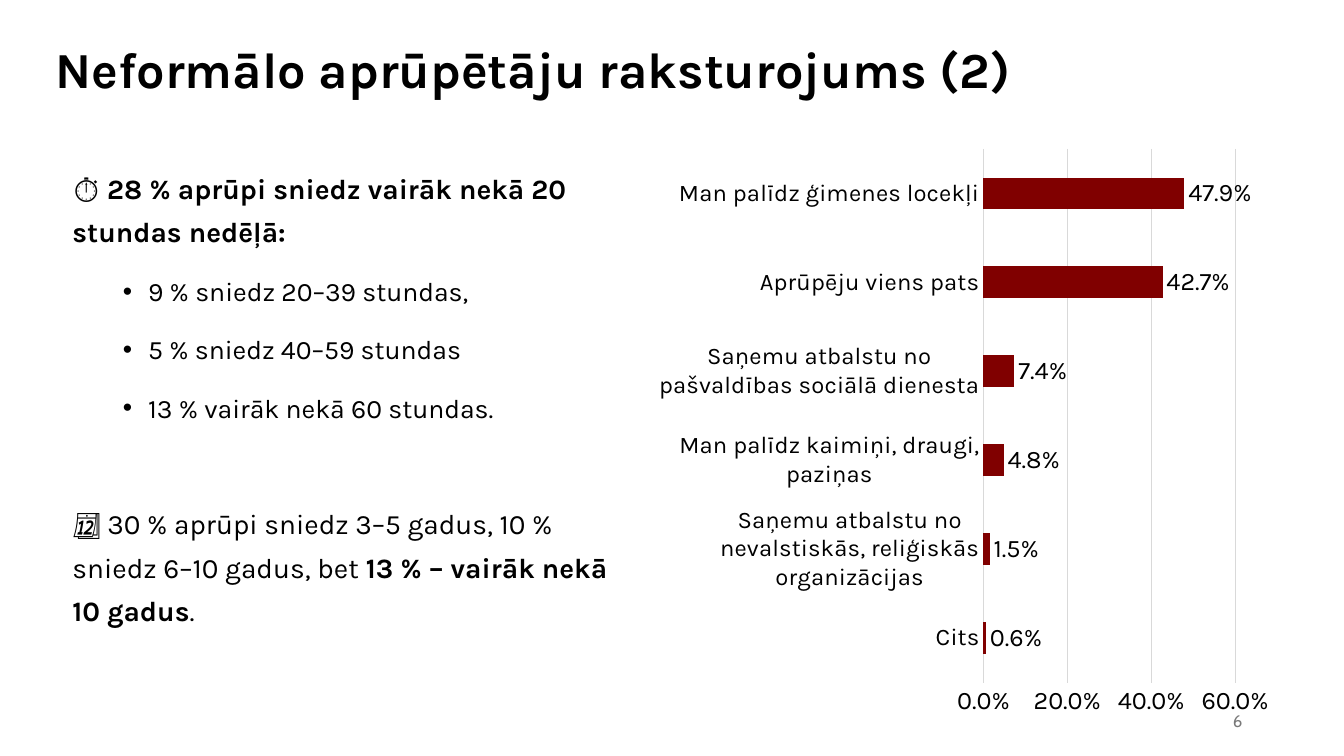
import dataclasses

import pptx
import pptx.chart.data
import pptx.dml.color
import pptx.enum.chart
import pptx.enum.text
import pptx.oxml
import pptx.oxml.ns
import pptx.util

Inches = pptx.util.Inches
Pt = pptx.util.Pt

COLORS = {"text": "000000", "bar": "800000", "grid": "D9D9D9", "number": "797979"}
FONT = "Karla"
PERCENT = "###0.0%"


@dataclasses.dataclass(frozen=True)
class Span:
    text: str
    size: float = 20
    bold: bool = False
    color: str = "text"
    font: str = FONT


@dataclasses.dataclass(frozen=True)
class Para:
    spans: tuple[Span, ...]
    line_spacing: float = 1.0
    before: float = 0
    after: float = 0
    bullet: bool = False
    right: bool = False


@dataclasses.dataclass(frozen=True)
class Box:
    left: float
    top: float
    width: float
    height: float
    paras: tuple[Para, ...]
    middle: bool = True


def body_para(*spans: Span, before: float = 6, bullet: bool = False) -> Para:
    return Para(spans, line_spacing=1.3, before=before, after=6, bullet=bullet)


HOURS = ("9 % sniedz 20–39 stundas,", "5 % sniedz 40–59 stundas", "13 % vairāk nekā 60 stundas.")

BOXES = (
    Box(0.45, 0.38, 11.86, 0.67, (
        Para((Span("Neformālo aprūpētāju raksturojums (2)", 36, True),), line_spacing=0.9),
    )),
    Box(0.62, 1.55, 5.55, 5.35, (
        body_para(Span("⏱️ "), Span("28 % aprūpi sniedz vairāk nekā 20 stundas nedēļā:", bold=True)),
        *(body_para(Span(hours, 19), bullet=True) for hours in HOURS),
        body_para(
            Span("📆 30 % aprūpi sniedz 3–5 gadus, 10 % sniedz 6–10 gadus, bet "),
            Span("13 % – vairāk nekā 10 gadus", bold=True),
            Span("."),
            before=46,
        ),
    ), middle=False),
    Box(9.42, 6.95, 3, 0.4, (
        Para((Span("6", 12, color="number", font="Cabin"),), right=True),
    )),
)

SUPPORT = {
    "Cits": 0.006,
    "Saņemu atbalstu no nevalstiskās, reliģiskās organizācijas": 0.015,
    "Man palīdz kaimiņi, draugi, paziņas": 0.048,
    "Saņemu atbalstu no pašvaldības sociālā dienesta": 0.074,
    "Aprūpēju viens pats": 0.427,
    "Man palīdz ģimenes locekļi": 0.479,
}


def rgb(name: str) -> pptx.dml.color.RGBColor:
    return pptx.dml.color.RGBColor.from_string(COLORS[name])


def style_font(font, size: float, color: str = "text", name: str = FONT, bold: bool = False) -> None:
    font.name = name
    font.size = Pt(size)
    font.bold = bold
    font.color.rgb = rgb(color)


def add_bullet(paragraph) -> None:
    properties = paragraph._p.get_or_add_pPr()
    properties.set("marL", str(Inches(0.75)))
    properties.set("indent", str(Inches(-0.25)))
    namespace = pptx.oxml.ns.nsdecls("a")
    properties.append(pptx.oxml.parse_xml(f'<a:buFont {namespace} typeface="Arial"/>'))
    properties.append(pptx.oxml.parse_xml(f'<a:buChar {namespace} char="•"/>'))


def add_box(page, box: Box) -> None:
    shape = page.shapes.add_textbox(
        Inches(box.left), Inches(box.top), Inches(box.width), Inches(box.height)
    )
    frame = shape.text_frame
    frame.word_wrap = True
    anchors = pptx.enum.text.MSO_ANCHOR
    frame.vertical_anchor = anchors.MIDDLE if box.middle else anchors.TOP
    for index, para in enumerate(box.paras):
        paragraph = frame.add_paragraph() if index else frame.paragraphs[0]
        paragraph.line_spacing = para.line_spacing
        paragraph.space_before = Pt(para.before)
        paragraph.space_after = Pt(para.after)
        if para.right:
            paragraph.alignment = pptx.enum.text.PP_ALIGN.RIGHT
        if para.bullet:
            paragraph.level = 1
            add_bullet(paragraph)
        for span in para.spans:
            run = paragraph.add_run()
            run.text = span.text
            style_font(run.font, span.size, span.color, span.font, span.bold)


def add_support_chart(page) -> None:
    data = pptx.chart.data.CategoryChartData(number_format=PERCENT)
    data.categories = list(SUPPORT)
    data.add_series("Series 1", list(SUPPORT.values()))
    chart = page.shapes.add_chart(
        pptx.enum.chart.XL_CHART_TYPE.BAR_CLUSTERED,
        Inches(6.41), Inches(1.36), Inches(6.3), Inches(5.86), data,
    ).chart
    chart.has_legend = False
    chart.has_title = False
    style_font(chart.font, 18)

    plot = chart.plots[0]
    plot.gap_width = 182
    plot.vary_by_categories = False
    series = plot.series[0]
    series.format.fill.solid()
    series.format.fill.fore_color.rgb = rgb("bar")
    labels = series.data_labels
    labels.show_value = True
    labels.position = pptx.enum.chart.XL_LABEL_POSITION.OUTSIDE_END
    labels.number_format = PERCENT
    labels.number_format_is_linked = False
    style_font(labels.font, 18)

    for axis, size in ((chart.category_axis, 17), (chart.value_axis, 18)):
        axis.major_tick_mark = pptx.enum.chart.XL_TICK_MARK.NONE
        axis.minor_tick_mark = pptx.enum.chart.XL_TICK_MARK.NONE
        style_font(axis.tick_labels.font, size)
    chart.category_axis.has_major_gridlines = False
    values = chart.value_axis
    values.minimum_scale, values.maximum_scale, values.major_unit = 0, 0.6, 0.2
    values.has_major_gridlines = True
    values.tick_labels.number_format = PERCENT
    values.tick_labels.number_format_is_linked = False
    values.format.line.fill.background()
    for line in (chart.category_axis.format.line, values.major_gridlines.format.line):
        line.color.rgb = rgb("grid")
        line.width = Pt(0.75)


def main() -> None:
    deck = pptx.Presentation()
    deck.slide_width = Inches(13.33)
    deck.slide_height = Inches(7.5)
    page = deck.slides.add_slide(deck.slide_layouts[6])
    add_support_chart(page)
    for box in BOXES:
        add_box(page, box)
    deck.save("out.pptx")


if __name__ == "__main__":
    main()
